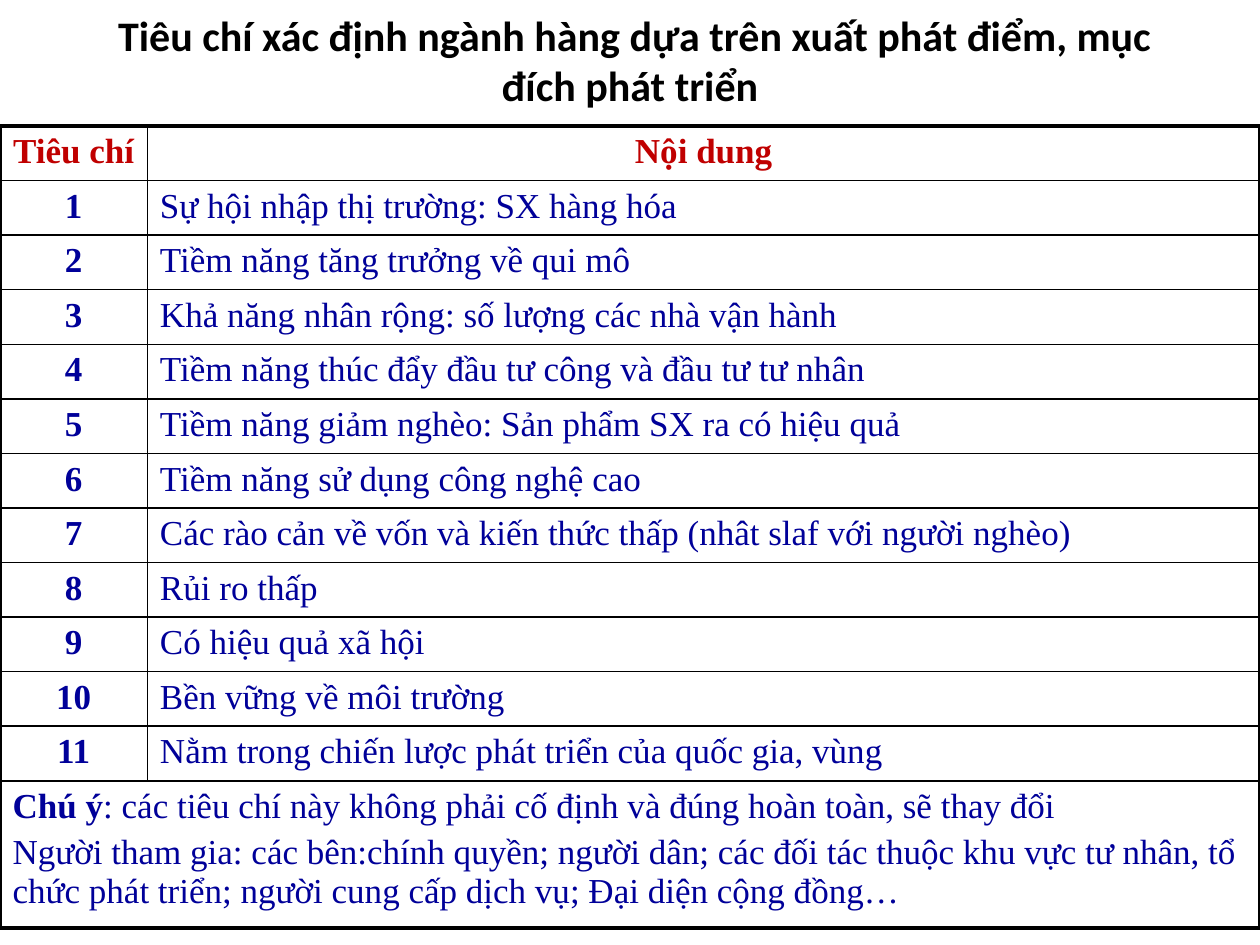
import pptx
import pptx.util
import pptx.dml.color
import pptx.enum.text
import pptx.oxml.ns
from lxml import etree

COLORS = {"black": "000000", "white": "FFFFFF", "red": "C00000", "navy": "000099"}
CENTER = pptx.enum.text.PP_ALIGN.CENTER
LEFT = pptx.enum.text.PP_ALIGN.LEFT
MIDDLE = pptx.enum.text.MSO_ANCHOR.MIDDLE
THIN, THICK = 1, 2.25

TITLE = " Tiêu chí xác định ngành hàng dựa trên xuất phát điểm, mục đích phát triển"
HEADER = ["Tiêu chí", "Nội dung"]
CRITERIA = [
    "Sự hội nhập thị trường: SX hàng hóa",
    "Tiềm năng tăng trưởng về qui mô",
    "Khả năng nhân rộng: số lượng các nhà vận hành",
    "Tiềm năng thúc đẩy đầu tư công và đầu tư tư nhân",
    "Tiềm năng giảm nghèo: Sản phẩm SX ra có hiệu quả",
    "Tiềm năng sử dụng công nghệ cao",
    "Các rào cản về vốn và kiến thức thấp (nhât slaf với người nghèo)",
    "Rủi ro thấp",
    "Có hiệu quả xã hội",
    "Bền vững về môi trường",
    "Nằm trong chiến lược phát triển của quốc gia, vùng",
]
NOTE = [
    [("Chú ý", True),
     (": các tiêu chí này không phải cố định và đúng hoàn toàn, sẽ thay đổi", False)],
    [("Người tham gia: các bên:chính quyền; người dân; các đối tác thuộc khu vực "
      "tư nhân, tổ chức phát triển; người cung cấp dịch vụ; Đại diện cộng đồng…", False)],
]


def rgb(name):
    return pptx.dml.color.RGBColor.from_string(COLORS[name])


class SlideBuilder:
    title_font, body_font = "Calibri", "Times New Roman"
    title_size, body_size = 24, 20

    def __init__(self, prs):
        self.width, self.height = prs.slide_width, prs.slide_height
        self.s = prs.slides.add_slide(prs.slide_layouts[5])

    def box(self, x, y, w, h):
        """Turn shares of the slide's size into lengths."""
        return (int(x * self.width), int(y * self.height),
                int(w * self.width), int(h * self.height))

    def style(self, p, font, size, color, align):
        p.alignment = align
        p.font.name, p.font.size = font, pptx.util.Pt(size)
        p.font.color.rgb = rgb(color)

    def title(self, text, *shares):
        sp = self.s.shapes.title
        sp.left, sp.top, sp.width, sp.height = self.box(*shares)
        tf = sp.text_frame
        tf.text, tf.word_wrap, tf.vertical_anchor = text, True, MIDDLE
        p = tf.paragraphs[0]
        self.style(p, self.title_font, self.title_size, "black", CENTER)
        p.font.bold = True

    def table(self, shares, col_shares, row_shares):
        x, y, w, h = self.box(*shares)
        tbl = self.s.shapes.add_table(len(row_shares), len(col_shares), x, y, w, h).table
        tbl.first_row = tbl.horz_banding = False
        for col, share in zip(tbl.columns, col_shares):
            col.width = int(w * share)
        for row, share in zip(tbl.rows, row_shares):
            row.height = int(h * share)
        return tbl

    def frame(self, tbl):
        """Thin inner lines, thick outer lines, white cells."""
        last_row, last_col = len(tbl.rows) - 1, len(tbl.columns) - 1
        for i, row in enumerate(tbl.rows):
            for j, cell in enumerate(row.cells):
                tcPr = cell._tc.get_or_add_tcPr()
                outer = {"L": j == 0, "R": j == last_col or i == last_row,
                         "T": i == 0, "B": i == last_row}
                for side, is_outer in outer.items():
                    ln = etree.SubElement(tcPr, pptx.oxml.ns.qn("a:ln" + side))
                    ln.set("w", str(pptx.util.Pt(THICK if is_outer else THIN)))
                    fill = etree.SubElement(ln, pptx.oxml.ns.qn("a:solidFill"))
                    etree.SubElement(fill, pptx.oxml.ns.qn("a:srgbClr")).set("val", COLORS["black"])
                cell.fill.solid()
                cell.fill.fore_color.rgb = rgb("white")

    def cell(self, cell, paragraphs, color="navy", align=LEFT):
        """Fill a cell with paragraphs, each a list of (text, bold)."""
        tf = cell.text_frame
        for i, runs in enumerate(paragraphs):
            p = tf.add_paragraph() if i else tf.paragraphs[0]
            self.style(p, self.body_font, self.body_size, color, align)
            p.space_before = pptx.util.Pt(0.2 * self.body_size)
            for text, bold in runs:
                r = p.add_run()
                r.text, r.font.bold = text, bold
                r.font.size, r.font.name = p.font.size, p.font.name
                r.font.color.rgb = rgb(color)


def main():
    prs = pptx.Presentation()
    prs.slide_width, prs.slide_height = pptx.util.Inches(10), pptx.util.Inches(7.5)
    b = SlideBuilder(prs)

    # Title
    b.title(TITLE, 0.05, 0, 0.9, 0.95 / 7.5)

    # Table grid: equal rows above a taller note row
    height, note_height = 6.37, 1.17
    n = len(CRITERIA) + 1
    line = (height - note_height) / n
    rows = [line / height] * n + [note_height / height]
    tbl = b.table((0, 1 / 7.5, 1, height / 7.5), [0.117, 0.883], rows)
    b.frame(tbl)

    # Header and numbered criteria
    for j, text in enumerate(HEADER):
        b.cell(tbl.cell(0, j), [[(text, True)]], "red", CENTER)
    for i, text in enumerate(CRITERIA, 1):
        b.cell(tbl.cell(i, 0), [[(str(i), True)]], align=CENTER)
        b.cell(tbl.cell(i, 1), [[(text, False)]])

    # Note across both columns
    tbl.cell(n, 0).merge(tbl.cell(n, 1))
    b.cell(tbl.cell(n, 0), NOTE)

    prs.save("out.pptx")


if __name__ == "__main__":
    main()
